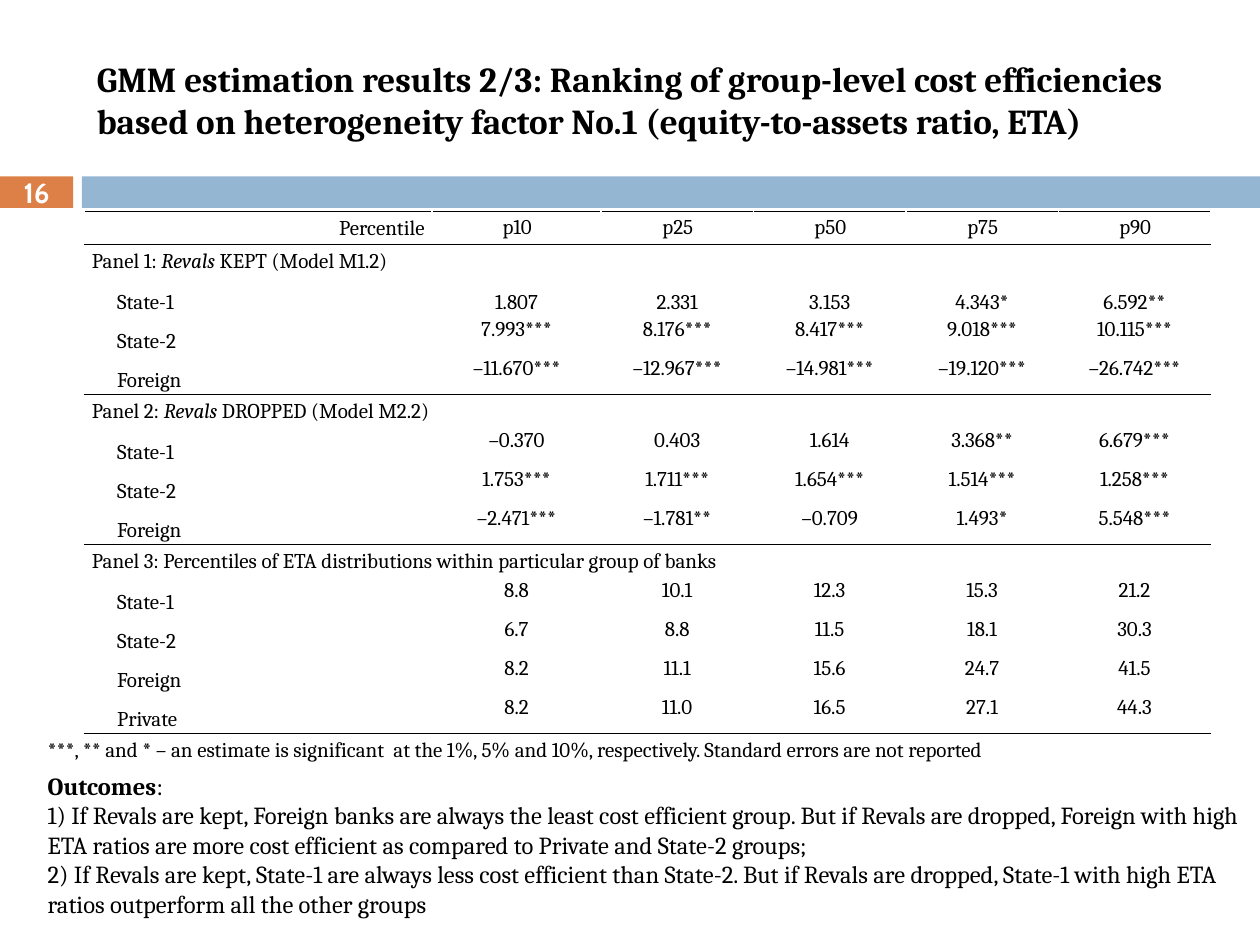
from lxml.etree import SubElement
from pptx import Presentation
from pptx.dml.color import RGBColor
from pptx.enum.shapes import MSO_SHAPE
from pptx.enum.text import MSO_ANCHOR, PP_ALIGN
from pptx.oxml.ns import qn
from pptx.util import Inches, Pt

BLACK, WHITE, ORANGE, BLUE = "000000", "FFFFFF", "DD8047", "94B6D2"
COLUMN_WIDTHS = [2.76, 1.34, 1.21, 1.21, 1.21, 1.21]
PERCENTILES = ["p10", "p25", "p50", "p75", "p90"]
PANELS = [
    (["Panel 1: ", ("Revals ", {"italic": True}), "KEPT (Model M1.2)"], [
        ["State-1", "1.807", "2.331", "3.153", "4.343*", "6.592**"],
        ["State-2", "7.993***", "8.176***", "8.417***", "9.018***", "10.115***"],
        ["Foreign", "–11.670***", "–12.967***", "–14.981***", "–19.120***", "–26.742***"],
    ]),
    (["Panel 2: ", ("Revals ", {"italic": True}), "DROPPED (Model M2.2)"], [
        ["State-1", "–0.370", "0.403", "1.614", "3.368**", "6.679***"],
        ["State-2", "1.753***", "1.711***", "1.654***", "1.514***", "1.258***"],
        ["Foreign", "–2.471***", "–1.781**", "–0.709", "1.493*", "5.548***"],
    ]),
    (["Panel 3: Percentiles of ETA distributions within particular group of banks"], [
        ["State-1", "8.8", "10.1", "12.3", "15.3", "21.2"],
        ["State-2", "6.7", "8.8", "11.5", "18.1", "30.3"],
        ["Foreign", "8.2", "11.1", "15.6", "24.7", "41.5"],
        ["Private", "8.2", "11.0", "16.5", "27.1", "44.3"],
    ]),
]


def color(hex_value):
    return RGBColor.from_string(hex_value)


def write(paragraph, text, size=12, font="Cambria", fill=BLACK, bold=False,
          align=PP_ALIGN.LEFT, indent=0, line_spacing=None, space_after=None):
    """Fill a paragraph with a string, or a list of strings and (string, format) pairs."""
    paragraph.alignment = align
    paragraph.line_spacing = line_spacing
    if space_after:
        paragraph.space_after = Pt(space_after)
    if indent:
        paragraph._p.get_or_add_pPr().set("indent", str(Inches(indent)))
    for part in [text] if isinstance(text, str) else text:
        words, changes = (part, {}) if isinstance(part, str) else part
        run = paragraph.add_run()
        run.text = words
        run.font.name, run.font.size = font, Pt(size)
        run.font.color.rgb = color(fill)
        run.font.bold = changes.get("bold", bold)
        run.font.italic = changes.get("italic", False)


def add_frame(slide, box, anchor=MSO_ANCHOR.TOP, side_margin=0.1):
    frame = slide.shapes.add_textbox(*map(Inches, box)).text_frame
    frame.word_wrap = True
    frame.vertical_anchor = anchor
    frame.margin_left = frame.margin_right = Inches(side_margin)
    return frame


def add_band(slide, box, fill):
    shape = slide.shapes.add_shape(MSO_SHAPE.RECTANGLE, *map(Inches, box))
    shape.shadow.inherit = False
    shape.fill.solid()
    shape.fill.fore_color.rgb = color(fill)
    shape.line.fill.background()


def add_header(slide, left, top, width, height):
    # Title above the two bands, slide number on the left band
    number_width, band_top, band_height = 0.58, 1.4, 0.25
    band_left = 0.65
    add_band(slide, (left, band_top, number_width, band_height), ORANGE)
    add_band(slide, (band_left, band_top, left + width - band_left, band_height), BLUE)
    title = add_frame(slide, (0.67, top, left + width - 0.67, height), MSO_ANCHOR.MIDDLE)
    write(title.paragraphs[0],
          "GMM estimation results 2/3: Ranking of group-level cost efficiencies "
          "based on heterogeneity factor No.1 (equity-to-assets ratio, ETA)",
          size=20, bold=True)
    number = add_frame(slide, (left, 1.39, number_width, 0.27), MSO_ANCHOR.MIDDLE, 0)
    number.margin_top = number.margin_bottom = 0
    write(number.paragraphs[0], "16", size=16, font="Cabin", fill=WHITE, bold=True,
          align=PP_ALIGN.CENTER)


def style_cell(cell, top=WHITE, bottom=WHITE, anchor=MSO_ANCHOR.TOP, margins=(0.06, 0.01)):
    side, upper = margins
    cell.margin_left = cell.margin_right = Inches(side)
    cell.margin_top, cell.margin_bottom = Inches(upper), 0
    cell.vertical_anchor = anchor
    properties = cell._tc.get_or_add_tcPr()
    for tag, line_color in (("lnL", WHITE), ("lnR", WHITE), ("lnT", top), ("lnB", bottom)):
        line = SubElement(properties, qn("a:" + tag), w=str(Pt(1)))
        SubElement(SubElement(line, qn("a:solidFill")), qn("a:srgbClr"), val=line_color)
    cell.fill.solid()
    cell.fill.fore_color.rgb = color(WHITE)


def add_results_table(slide, left, top, width, height):
    row_count = 1 + sum(1 + len(rows) for _, rows in PANELS)
    frame = slide.shapes.add_table(row_count, len(COLUMN_WIDTHS),
                                   *map(Inches, (left, top, width, height)))
    table = frame.table
    table.first_row = table.horz_banding = False
    for column, column_width in zip(table.columns, COLUMN_WIDTHS):
        column.width = Inches(column_width)
    for row in table.rows:
        row.height = Inches(0.24)

    # Percentile header
    table.rows[0].height = Inches(0.26)
    for index, label in enumerate(["Percentile"] + PERCENTILES):
        cell = table.cell(0, index)
        style_cell(cell, BLACK, BLACK, MSO_ANCHOR.MIDDLE, (0, 0) if index else (0.06, 0.01))
        write(cell.text_frame.paragraphs[0], label, indent=0.01 if index else 0.49,
              align=PP_ALIGN.CENTER if index else PP_ALIGN.RIGHT)

    # Panels: a merged heading, then one row per bank group
    row_index = 1
    for panel_index, (heading, rows) in enumerate(PANELS):
        table.rows[row_index].height = Inches(0.26)
        for index in range(len(COLUMN_WIDTHS)):
            style_cell(table.cell(row_index, index), top=BLACK, anchor=MSO_ANCHOR.MIDDLE)
        cell = table.cell(row_index, 0)
        cell.merge(table.cell(row_index, len(COLUMN_WIDTHS) - 1))
        write(cell.text_frame.paragraphs[0], heading, align=PP_ALIGN.JUSTIFY)
        for group_index, values in enumerate(rows):
            row_index += 1
            bottom = BLACK if group_index == len(rows) - 1 else WHITE
            first_group = panel_index == group_index == 0
            for index, value in enumerate(values):
                cell = table.cell(row_index, index)
                style_cell(cell, bottom=bottom)
                write(cell.text_frame.paragraphs[0], value,
                      align=PP_ALIGN.CENTER if index else PP_ALIGN.LEFT,
                      indent=0 if index else 0.2,
                      line_spacing=1.5 if first_group or not index else None)
        row_index += 1
    table.rows[4].height = Inches(0.27)
    frame.height = Inches(height)


def add_outcomes(slide, *box):
    frame = add_frame(slide, box)
    write(frame.paragraphs[0],
          "***, ** and * – an estimate is significant  at the 1%, 5% and 10%, "
          "respectively. Standard errors are not reported", space_after=5)
    for text in (
        [("Outcomes", {"bold": True}), ":"],
        "1) If Revals are kept, Foreign banks are always the least cost efficient group. "
        "But if Revals are dropped, Foreign with high ETA ratios are more cost efficient "
        "as compared to Private and State-2 groups;",
        "2) If Revals are kept, State-1 are always less cost efficient than State-2. "
        "But if Revals are dropped, State-1 with high ETA ratios outperform all the "
        "other groups",
    ):
        write(frame.add_paragraph(), text, size=14)


def main():
    presentation = Presentation()
    presentation.slide_width, presentation.slide_height = Inches(10), Inches(7.5)
    slide = presentation.slides.add_slide(presentation.slide_layouts[6])
    add_header(slide, 0, 0.25, 10, 1.08)
    add_outcomes(slide, 0.28, 5.8, 9.69, 1.42)
    add_results_table(slide, 0.67, 1.68, 8.92, 4.15)
    presentation.save("out.pptx")


if __name__ == "__main__":
    main()
